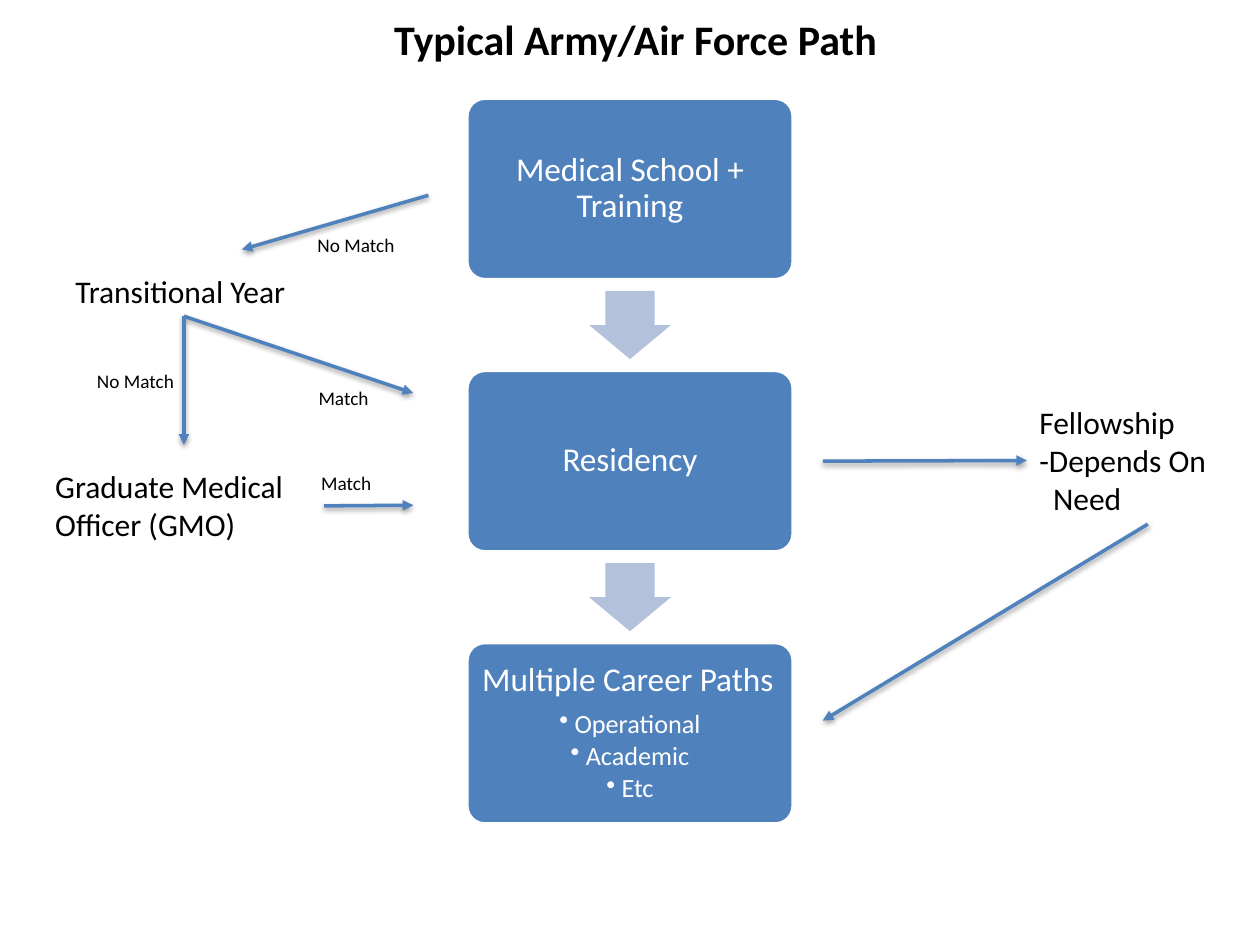
from lxml import etree
from pptx import Presentation
from pptx.dml.color import RGBColor
from pptx.enum.shapes import MSO_CONNECTOR, MSO_SHAPE
from pptx.enum.text import MSO_ANCHOR, PP_ALIGN
from pptx.oxml import parse_xml
from pptx.oxml.ns import nsdecls, qn
from pptx.util import Inches, Pt

ROUND = MSO_SHAPE.ROUNDED_RECTANGLE
DOWN = MSO_SHAPE.DOWN_ARROW
LINE = MSO_CONNECTOR.STRAIGHT
LEFT, CENTER = PP_ALIGN.LEFT, PP_ALIGN.CENTER
MIDDLE = MSO_ANCHOR.MIDDLE
BLUE, PALE, WHITE, BLACK = "4F81BD", "B3C1DB", "FFFFFF", "000000"

STEPS = [
    ("Medical School + Training", []),
    ("Residency", []),
    ("Multiple Career Paths", ["Operational", "Academic", "Etc"]),
]
MID, TOP, PITCH = 5, 0.78, 2.16
BOX_W, BOX_H = 2.59, 1.44
ARROW_W, ARROW_H = 0.65, 0.54

NOTES = {
    "title": (3.03, 0.06, 4.63, 0.5, 24, ["Typical Army/Air Force Path"]),
    "year": (0.5, 2.11, 1.92, 0.4, 18, ["Transitional Year"]),
    "fellow": (8.15, 3.15, 1.92, 1.01, 18, ["Fellowship", "-Depends On", "Need"]),
    "gmo": (0.34, 3.66, 2.23, 0.71, 18, ["Graduate Medical Officer (GMO)"]),
}
LABELS = [
    (2.42, 1.8, 0.82, 0.29, 11, ["No Match"]),
    (0.67, 2.88, 0.82, 0.29, 11, ["No Match"]),
    (2.45, 3.69, 0.6, 0.29, 11, ["Match"]),
    (2.43, 3.02, 0.6, 0.29, 11, ["Match"]),
]
LINKS = [
    ((6.53, 3.66), (8.15, 3.66), None, ("fellow", 1)),
    ((3.4, 1.55), (1.92, 1.98), None, None),
    ((1.46, 2.52), (3.28, 3.12), ("year", 2), None),
    ((1.46, 2.52), (1.46, 3.53), ("year", 2), None),
    ((2.58, 4.01), (3.28, 4.01), ("gmo", 3), None),
    ((9.11, 4.16), (6.53, 5.72), ("fellow", 2), None),
]
SHADOW = (
    f'<a:effectLst {nsdecls("a")}>'
    '<a:outerShdw blurRad="40000" dist="20000" dir="5400000" rotWithShape="0">'
    '<a:srgbClr val="000000"><a:alpha val="38000"/></a:srgbClr>'
    "</a:outerShdw></a:effectLst>"
)


def rgb(code):
    return RGBColor.from_string(code)


def write(para, text, size, color, align=LEFT, bold=False):
    para.alignment = align
    run = para.add_run()
    run.text = text
    font = run.font
    font.name, font.size, font.bold = "Calibri", Pt(size), bold
    font.color.rgb = rgb(color)


def add_note(slide, x, y, w, h, size, lines, wrap=True, bold=False):
    note = slide.shapes.add_textbox(*map(Inches, (x, y, w, h)))
    frame = note.text_frame
    frame.word_wrap = wrap
    for i, text in enumerate(lines):
        para = frame.paragraphs[0] if i == 0 else frame.add_paragraph()
        write(para, text, size, BLACK, bold=bold)
    return note


def add_block(slide, kind, y, w, h, fill):
    block = slide.shapes.add_shape(
        kind, Inches(MID - w / 2), Inches(y), Inches(w), Inches(h))
    block.shadow.inherit = False
    block.fill.solid()
    block.fill.fore_color.rgb = rgb(fill)
    return block


def add_step(slide, y, head, items):
    box = add_block(slide, ROUND, y, BOX_W, BOX_H, BLUE)
    box.adjustments[0] = 0.1
    box.line.color.rgb = rgb(WHITE)
    box.line.width = Pt(2)
    frame = box.text_frame
    frame.word_wrap = True
    frame.vertical_anchor = MIDDLE
    frame.margin_left = frame.margin_right = Inches(0.08)
    frame.margin_top = frame.margin_bottom = Inches(0.08)
    para = frame.paragraphs[0]
    write(para, head, 19, WHITE, LEFT if items else CENTER)
    para.line_spacing, para.space_after = 0.9, Pt(6.65)
    for item in items:
        para = frame.add_paragraph()
        para.level = 1
        write(para, item, 15, WHITE, CENTER)
        para.line_spacing, para.space_after = 0.9, Pt(2.25)
        props = para._p.get_or_add_pPr()
        props.set("marL", str(Inches(0.12)))
        props.set("indent", str(Inches(-0.12)))
        etree.SubElement(props, qn("a:buChar")).set("char", "•")


def add_link(slide, start, end, source, target, notes):
    link = slide.shapes.add_connector(LINE, *map(Inches, start + end))
    if source:
        link.begin_connect(notes[source[0]], source[1])
    if target:
        link.end_connect(notes[target[0]], target[1])
    link.line.color.rgb = rgb(BLUE)
    link.line.width = Pt(2)
    tip = etree.SubElement(link.line._get_or_add_ln(), qn("a:tailEnd"))
    tip.set("type", "triangle")
    link._element.spPr.append(parse_xml(SHADOW))


def main():
    deck = Presentation()
    deck.slide_width, deck.slide_height = Inches(10), Inches(7.5)
    slide = deck.slides.add_slide(deck.slide_layouts[6])
    gap = (PITCH - BOX_H - ARROW_H) / 2
    for i, (head, items) in enumerate(STEPS):
        y = TOP + i * PITCH
        add_step(slide, y, head, items)
        if i < len(STEPS) - 1:
            arrow = add_block(
                slide, DOWN, y + BOX_H + gap, ARROW_W, ARROW_H, PALE)
            arrow.adjustments[0], arrow.adjustments[1] = 0.6, 0.5
            arrow.line.fill.background()
    notes = {name: add_note(slide, *note, bold=name == "title")
             for name, note in NOTES.items()}
    need = notes["fellow"].text_frame.paragraphs[-1]
    need._p.get_or_add_pPr().set("marL", str(Inches(0.11)))
    for link in LINKS:
        add_link(slide, *link, notes)
    for label in LABELS:
        add_note(slide, *label, wrap=False)
    deck.save("out.pptx")


if __name__ == "__main__":
    main()
